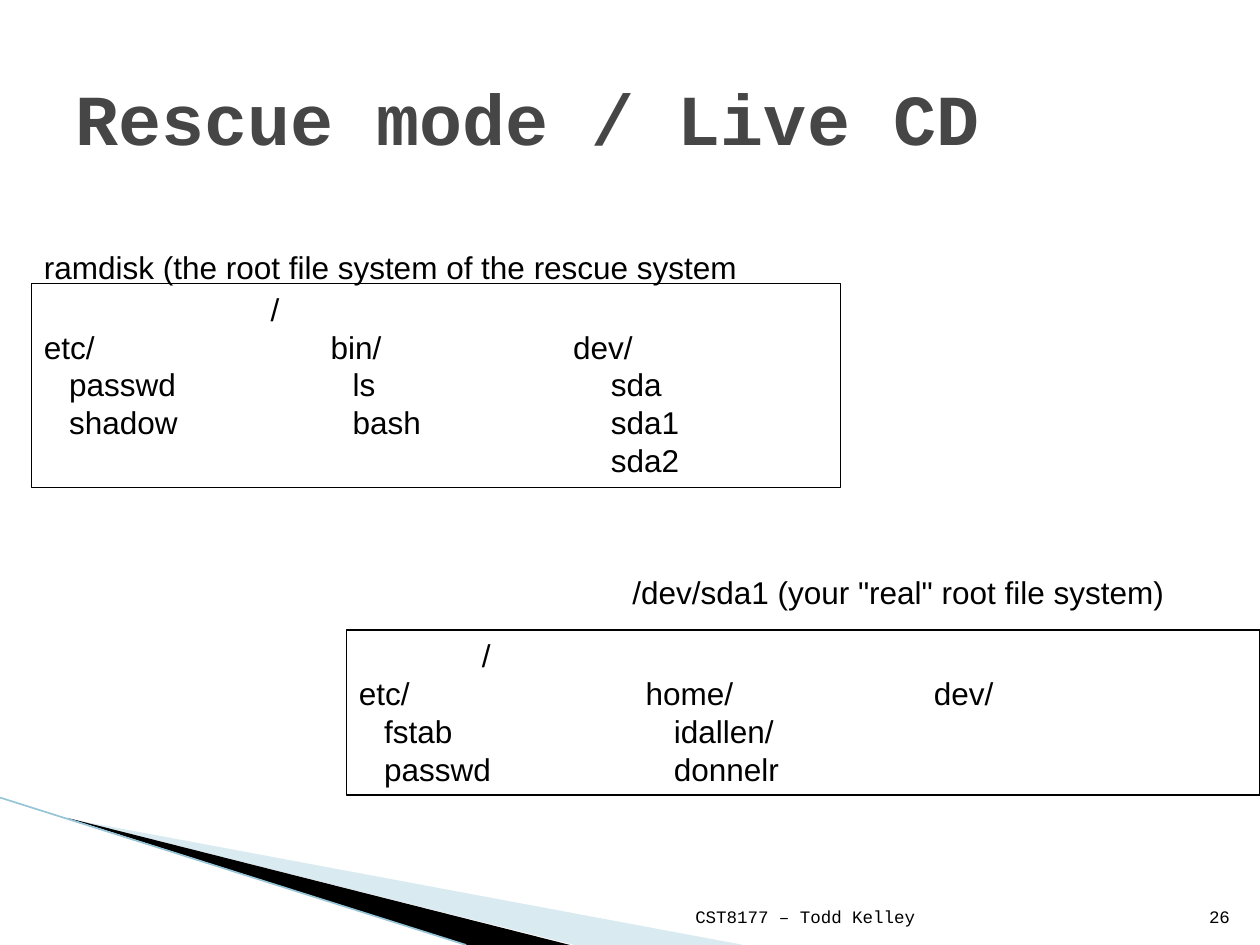
"""Build the slide that compares a rescue system's root with the real root."""
from dataclasses import dataclass

from lxml.etree import SubElement
from pptx import Presentation
from pptx.dml.color import RGBColor
from pptx.enum.shapes import MSO_CONNECTOR as Connector, MSO_SHAPE as Preset
from pptx.enum.text import MSO_ANCHOR as Anchor, MSO_AUTO_SIZE as Fit, PP_ALIGN as Align
from pptx.oxml.ns import qn
from pptx.util import Inches, Pt

SLIDE_WIDTH, SLIDE_HEIGHT = Inches(10), Inches(7.5)
COLUMNS, ROWS = 40, 30
CELL = SLIDE_WIDTH // COLUMNS
COLORS = {"ink": "000000", "title": "464646", "pale": "A0CBDC", "edge": "97C5D8"}
BODY = {"name": "Arial", "size": Pt(18), "bold": False}
HEADING = {"name": "Courier New", "size": Pt(41), "bold": True}
FOOTER = {"name": "Courier New", "size": Pt(10), "bold": False}


@dataclass(frozen=True)
class Area:
    left: float
    top: float
    width: float
    height: float

    def lengths(self) -> list[int]:
        return [round(n * CELL) for n in (self.left, self.top, self.width, self.height)]


@dataclass(frozen=True)
class Label:
    text: str
    area: Area
    style: dict
    color: str = "ink"
    anchor: Anchor = Anchor.TOP
    align: Align = Align.LEFT


@dataclass(frozen=True)
class Tree:
    area: Area
    lines: list[list[tuple[float, str]]]


@dataclass(frozen=True)
class Wedge:
    points: list[tuple[float, float]]
    color: str
    opacity: int = 100


WEDGES = [
    Wedge([(2.2, 26), (23.6, 30), (18.24, 30)], "pale", 40),
    Wedge([(2.12, 25.96), (18.1, 30), (14.8, 30)], "ink"),
]
LABELS = [
    Label("Rescue mode / Live CD", Area(2, 1.2, 36, 5), HEADING, "title", Anchor.MIDDLE),
    Label("CST8177 – Todd Kelley", Area(19.16, 28.04, 10.28, 1.6), FOOTER,
          anchor=Anchor.BOTTOM, align=Align.RIGHT),
    Label("26", Area(37.84, 28.04, 1.6, 1.6), FOOTER,
          anchor=Anchor.BOTTOM, align=Align.RIGHT),
    Label("ramdisk (the root file system of the rescue system",
          Area(1, 7.68, 25, 1.6), BODY),
    Label('/dev/sda1 (your "real" root file system)',
          Area(19.68, 18, 19.68, 1.6), BODY),
]
TREES = [
    Tree(Area(1, 9, 25.68, 6.48), [
        [(7.2, "/")],
        [(0, "etc/"), (9.1, "bin/"), (16.8, "dev/")],
        [(0.8, "passwd"), (9.8, "ls"), (18, "sda")],
        [(0.8, "shadow"), (9.8, "bash"), (18, "sda1")],
        [(18, "sda2")],
    ]),
    Tree(Area(11, 20, 29, 5.24), [
        [(3.9, "/")],
        [(0, "etc/"), (9.1, "home/"), (18.25, "dev/")],
        [(0.8, "fstab"), (10, "idallen/")],
        [(0.8, "passwd"), (10, "donnelr")],
    ]),
]


def paint(color_format, name: str) -> None:
    color_format.rgb = RGBColor.from_string(COLORS[name])


def apply(target, values: dict) -> None:
    for name, value in values.items():
        setattr(target, name, value)


def add_span(para, text: str, style: dict, color: str) -> None:
    span = para.add_run()
    span.text = text
    apply(span.font, style)
    paint(span.font.color, color)


def add_label(page, label: Label) -> None:
    box = page.shapes.add_textbox(*label.area.lengths())
    apply(box.text_frame, {"word_wrap": True, "vertical_anchor": label.anchor})
    para = box.text_frame.paragraphs[0]
    para.alignment = label.align
    add_span(para, label.text, label.style, label.color)


def add_tree(page, tree: Tree) -> None:
    box = page.shapes.add_shape(Preset.RECTANGLE, *tree.area.lengths())
    box.shadow.inherit = False
    box.fill.background()
    paint(box.line.color, "ink")
    box.line.width = Pt(0.75)
    frame = box.text_frame
    apply(frame, {"word_wrap": True, "vertical_anchor": Anchor.TOP,
                  "auto_size": Fit.SHAPE_TO_FIT_TEXT})
    for index, entries in enumerate(tree.lines):
        para = frame.add_paragraph() if index else frame.paragraphs[0]
        para.alignment = Align.LEFT
        stops = SubElement(para._p.get_or_add_pPr(), qn("a:tabLst"))
        for column, _ in entries:
            if column:
                SubElement(stops, qn("a:tab"), pos=str(round(column * CELL)), algn="l")
        text = "".join(("\t" if column else "") + name for column, name in entries)
        add_span(para, text, BODY, "ink")


def add_wedge(page, wedge: Wedge) -> None:
    start, *others = [(round(x * CELL), round(y * CELL)) for x, y in wedge.points]
    builder = page.shapes.build_freeform(*start)
    builder.add_line_segments(others, close=True)
    shape = builder.convert_to_shape()
    shape.shadow.inherit = False
    shape.fill.solid()
    paint(shape.fill.fore_color, wedge.color)
    shape.line.fill.background()
    if wedge.opacity < 100:
        color = shape._element.spPr.find(f"{qn('a:solidFill')}/{qn('a:srgbClr')}")
        SubElement(color, qn("a:alpha"), val=str(wedge.opacity * 1000))


def add_edge(page) -> None:
    ends = [round(n * CELL) for n in (0, 25.32, 14.8, ROWS)]
    edge = page.shapes.add_connector(Connector.STRAIGHT, *ends)
    paint(edge.line.color, "edge")
    edge.line.width = Pt(0.95)
    SubElement(edge._element.spPr, qn("a:effectLst"))


def main() -> None:
    deck = Presentation()
    apply(deck, {"slide_width": SLIDE_WIDTH, "slide_height": SLIDE_HEIGHT})
    page = deck.slides.add_slide(deck.slide_layouts[6])
    for wedge in WEDGES:
        add_wedge(page, wedge)
    add_edge(page)
    for label in LABELS:
        add_label(page, label)
    for tree in TREES:
        add_tree(page, tree)
    deck.save("out.pptx")


if __name__ == "__main__":
    main()
